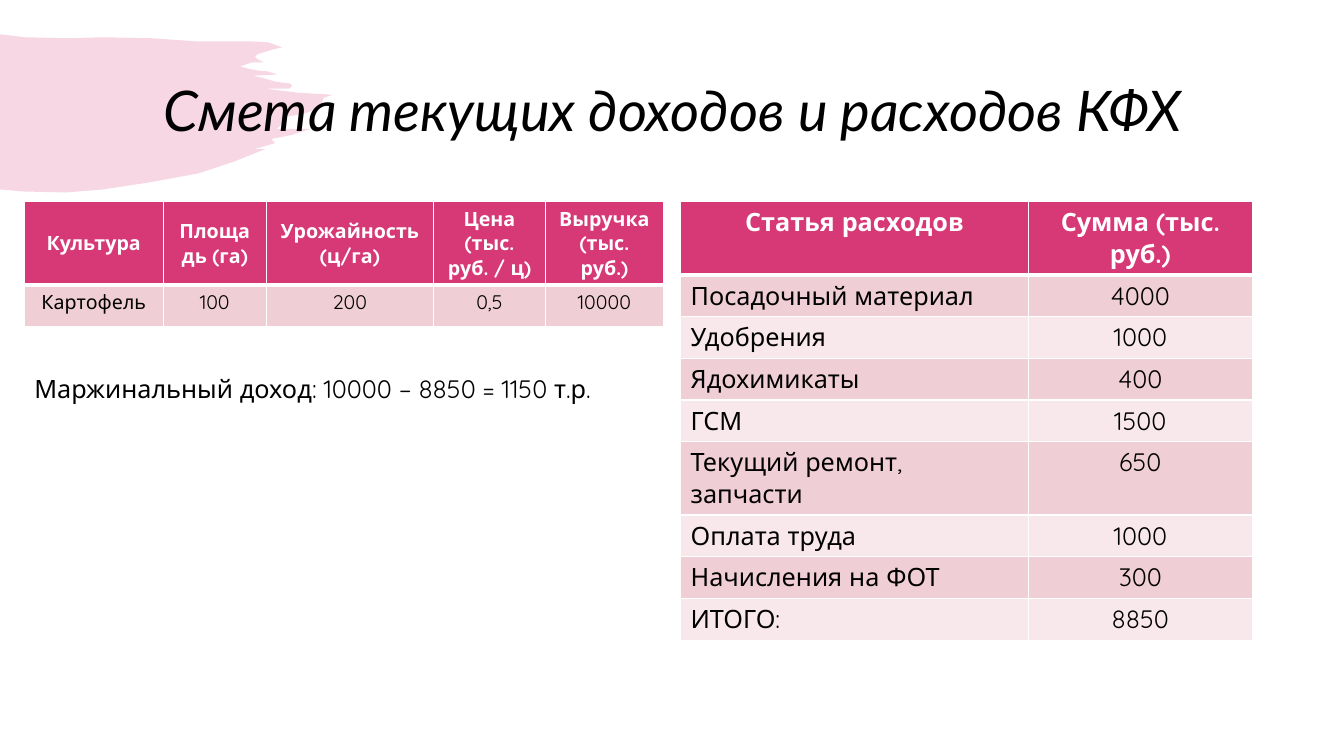
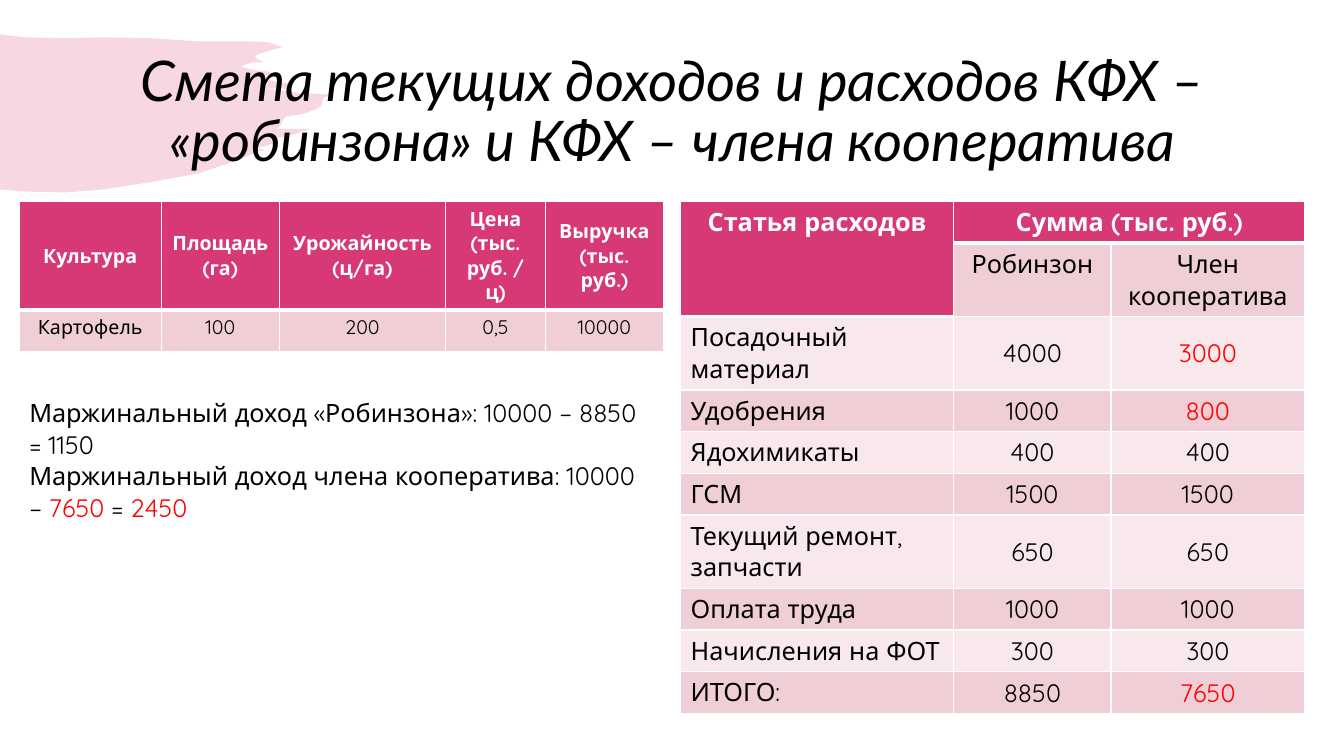
from lxml import etree
from pptx import Presentation
from pptx.dml.color import RGBColor
from pptx.enum.text import MSO_ANCHOR as Anchor, MSO_AUTO_SIZE as Fit, PP_ALIGN as Align
from pptx.oxml import parse_xml
from pptx.oxml.ns import nsdecls, qn
from pptx.util import Inches, Pt

PINK = RGBColor(0xD7, 0x39, 0x77)
ROSE = RGBColor(0xF0, 0xCE, 0xD6)
PALE = RGBColor(0xF8, 0xE8, 0xEC)
WHITE = RGBColor(0xFF, 0xFF, 0xFF)
BLACK = RGBColor(0, 0, 0)
RED = RGBColor(0xFF, 0, 0)

HEAD, BODY = "Lato", "Quicksand"
TOP = 2
ROW = 0.41

BRUSH = [
    (0, 0.34), (0.25, 0.37), (0.66, 0.38), (1.02, 0.37), (1.51, 0.38), (1.94, 0.41),
    (2.48, 0.41), (2.66, 0.42), (2.8, 0.47), (2.71, 0.49), (2.55, 0.54), (2.53, 0.57),
    (2.56, 0.59), (2.62, 0.62), (2.5, 0.62), (2.38, 0.66), (2.46, 0.68), (2.56, 0.7),
    (2.66, 0.71), (2.75, 0.74), (2.51, 0.75), (2.63, 0.78), (2.73, 0.81), (2.8, 0.82),
    (2.88, 0.83), (2.9, 0.85), (2.87, 0.88), (2.84, 0.88), (2.63, 0.88), (2.96, 0.92),
    (3.3, 0.94), (3.21, 0.97), (3.18, 1.06), (3.07, 1.11), (3, 1.13), (2.83, 1.16),
    (2.8, 1.2), (2.78, 1.25), (2.74, 1.28), (3.08, 1.28), (2.89, 1.34), (2.69, 1.38),
    (2.73, 1.42), (2.52, 1.48), (2.63, 1.48), (2.33, 1.6), (1.97, 1.72), (1.48, 1.81),
    (1.02, 1.88), (0.65, 1.91), (0.23, 1.9), (0, 1.88),
]

CROP = [
    ["Культура", "Площадь (га)", "Урожайность (ц/га)", "Цена (тыс. руб. / ц)",
     "Выручка (тыс. руб.)"],
    ["Картофель", "100", "200", "0,5", "10000"],
]
ITEMS = ["Посадочный материал", "Удобрения", "Ядохимикаты", "ГСМ",
         "Текущий ремонт, запчасти", "Оплата труда", "Начисления на ФОТ", "ИТОГО:"]
SOLO = ["4000", "1000", "400", "1500", "650", "1000", "300", "8850"]
COOP = ["3000", "800", "400", "1500", "650", "1000", "300", "7650"]
COST, SUM = "Статья расходов", "Сумма (тыс. руб.)"


def add_brush(slide):
    """Pale brush stroke behind everything else."""
    start, *rest = [(Inches(x), Inches(y)) for x, y in BRUSH]
    pen = slide.shapes.build_freeform(*start)
    pen.add_line_segments(rest, close=True)
    brush = pen.convert_to_shape()
    brush.shadow.inherit = False
    brush.line.fill.background()
    brush.fill.solid()
    brush.fill.fore_color.rgb = PINK
    tint = brush._element.spPr.find(".//" + qn("a:srgbClr"))
    etree.SubElement(tint, qn("a:alpha")).set("val", "20000")
    slide.shapes._spTree.insert(2, brush._element)


def set_title(slide, text):
    title = slide.shapes.title
    title.left, title.top = Inches(0.92), Inches(0.4)
    title.width, title.height = Inches(11.5), Inches(1.45)
    title.text = text
    frame = title.text_frame
    frame.vertical_anchor = Anchor.MIDDLE
    frame.auto_size = Fit.NONE
    para = frame.paragraphs[0]
    para.alignment = Align.CENTER
    para.line_spacing = 0.9
    font = para.font
    font.name, font.size, font.italic = HEAD, Pt(40), True
    font.color.rgb = BLACK


def add_edges(cell, row):
    """White rules, thick under the header."""
    wide = {"T": 3 if row == 1 else 1, "B": 1 if row else 3}
    props = cell._tc.get_or_add_tcPr()
    for side in "LRTB":
        width = Pt(wide.get(side, 1))
        props.append(parse_xml(
            f'<a:ln{side} {nsdecls("a")} w="{width}"><a:solidFill>'
            f'<a:srgbClr val="{WHITE}"/></a:solidFill></a:ln{side}>'))


def paint(cell, row):
    add_edges(cell, row)
    cell.fill.solid()
    cell.fill.fore_color.rgb = PINK if row == 0 else ROSE if row % 2 else PALE


def write(cell, text, size, color=BLACK, bold=False, align=Align.CENTER, anchor=Anchor.TOP):
    cell.text = text
    cell.vertical_anchor = anchor
    para = cell.text_frame.paragraphs[0]
    para.alignment = align
    font = para.font
    font.name, font.size, font.bold = BODY, Pt(size), bold
    font.color.rgb = color


def add_grid(slide, left, cols, rows):
    """Plain table with the given column widths and row count."""
    frame = slide.shapes.add_table(rows, len(cols), Inches(left), Inches(TOP),
                                   Inches(sum(cols)), Inches(ROW * rows))
    grid = frame.table
    grid.first_row = grid.horz_banding = False
    for col, width in zip(grid.columns, cols):
        col.width = Inches(width)
    return grid


def add_crop(slide, left, cols, note):
    """Income table; note holds paragraphs, each a list of (text, colour)."""
    grid = add_grid(slide, left, cols, 4)
    for r, line in enumerate(CROP):
        for c, text in enumerate(line):
            cell = grid.cell(r, c)
            paint(cell, r)
            if r == 0:
                write(cell, text, 14, WHITE, True, anchor=Anchor.MIDDLE)
            else:
                write(cell, text, 14)
    for c in range(len(cols)):
        for r in (2, 3):
            grid.cell(r, c).fill.background()
    last = grid.cell(3, 0)
    last.merge(grid.cell(3, len(cols) - 1))
    frame = last.text_frame
    for i, parts in enumerate(note):
        para = frame.add_paragraph() if i else frame.paragraphs[0]
        para.font.name, para.font.size = BODY, Pt(18)
        for text, color in parts:
            run = para.add_run()
            run.text = text
            run.font.color.rgb = color


def add_costs(slide, left, cols, lines, merges=(), anchor=Anchor.TOP):
    """Cost table; a third-column number unlike the second is red."""
    grid = add_grid(slide, left, cols, len(lines))
    for first, last in merges:
        grid.cell(*first).merge(grid.cell(*last))
    for r, line in enumerate(lines):
        for c, text in enumerate(line):
            cell = grid.cell(r, c)
            if cell.is_spanned:
                continue
            paint(cell, r)
            number = text.isdigit()
            if r == 0:
                write(cell, text, 18, WHITE, True)
            else:
                color = RED if number and c == 2 and text != line[1] else BLACK
                write(cell, text, 18, color, align=Align.CENTER if c else Align.LEFT,
                      anchor=anchor if number else Anchor.TOP)


def add_solo(slide):
    add_brush(slide)
    set_title(slide, "Смета текущих доходов и расходов КФХ")
    add_crop(slide, 0.24, [1.38, 1.02, 1.66, 1.11, 1.17],
             [[("Маржинальный доход: 10000 – 8850 = 1150 т.р.", BLACK)]])
    add_costs(slide, 6.75, [3.45, 2.22], [(COST, SUM), *zip(ITEMS, SOLO)])


def add_coop(slide):
    add_brush(slide)
    set_title(slide, "Смета текущих доходов и расходов КФХ – «робинзона» и КФХ – члена кооператива")
    add_crop(slide, 0.19, [1.41, 1.17, 1.65, 0.99, 1.17], [
        [("Маржинальный доход «Робинзона»: 10000 – 8850 = 1150", BLACK)],
        [("Маржинальный доход члена кооператива: 10000 – ", BLACK), ("7650", RED),
         (" = ", BLACK), ("2450", RED)],
    ])
    lines = [(COST, SUM, ""), ("", "Робинзон", "Член кооператива"), *zip(ITEMS, SOLO, COOP)]
    add_costs(slide, 6.75, [2.71, 1.56, 1.92], lines,
              [((0, 0), (1, 0)), ((0, 1), (0, 2))], Anchor.MIDDLE)


def main():
    deck = Presentation()
    deck.slide_width, deck.slide_height = Inches(13.33), Inches(7.5)
    layout = deck.slide_layouts[5]
    for build in (add_solo, add_coop):
        build(deck.slides.add_slide(layout))
    deck.save("out.pptx")


if __name__ == "__main__":
    main()
